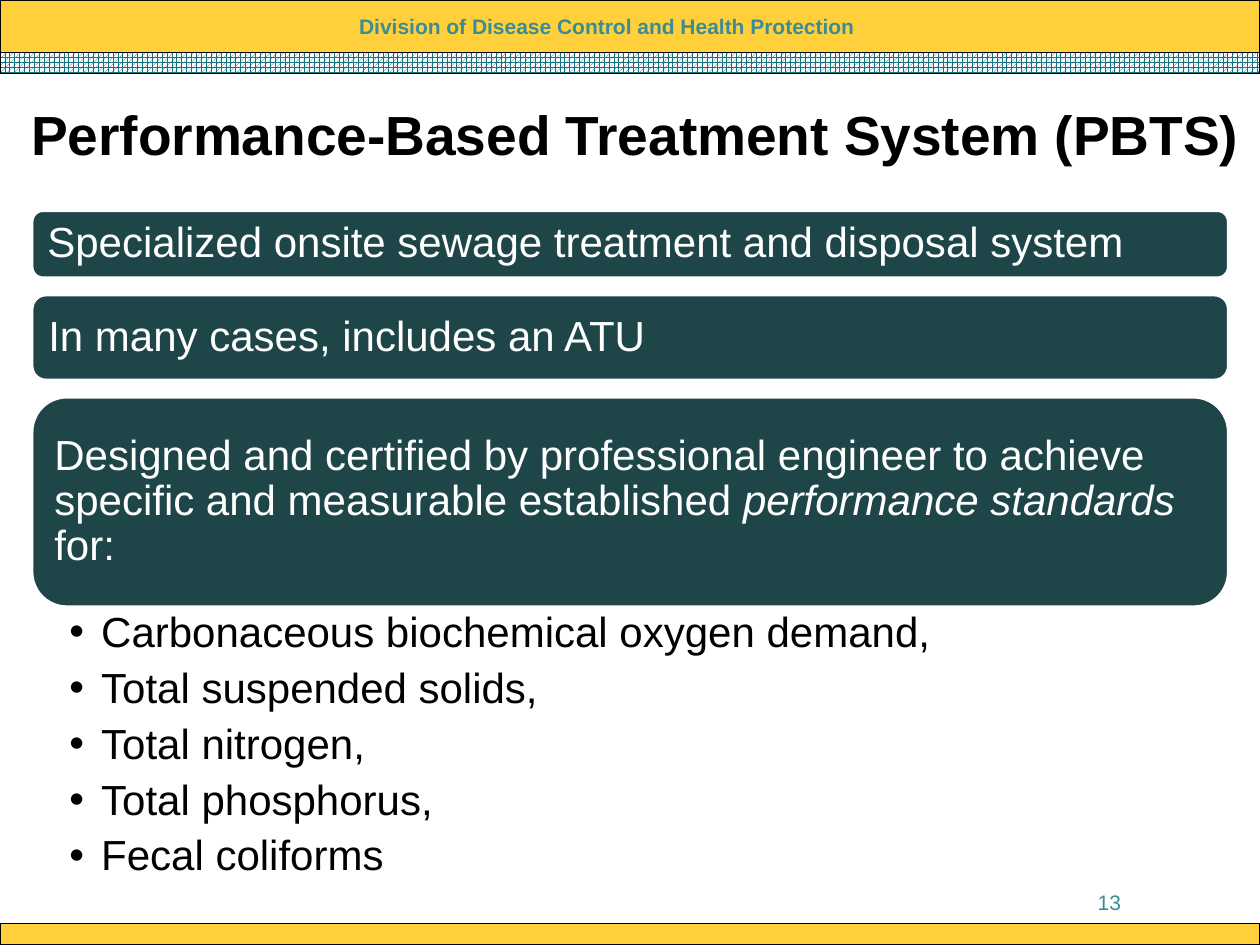
from dataclasses import dataclass

from lxml.etree import SubElement
from pptx import Presentation
from pptx.dml.color import RGBColor
from pptx.enum.dml import MSO_PATTERN
from pptx.enum.shapes import MSO_SHAPE
from pptx.enum.text import MSO_ANCHOR, MSO_AUTO_SIZE, PP_ALIGN
from pptx.oxml.ns import qn
from pptx.util import Cm, Pt


@dataclass(frozen=True)
class Theme:
    font: str = "Arial"
    gold: RGBColor = RGBColor(0xFF, 0xD0, 0x3B)
    weave: RGBColor = RGBColor(0x16, 0x71, 0x80)
    teal: RGBColor = RGBColor(0x3C, 0x8C, 0x93)
    panel: RGBColor = RGBColor(0x1E, 0x46, 0x49)
    black: RGBColor = RGBColor(0, 0, 0)
    white: RGBColor = RGBColor(0xFF, 0xFF, 0xFF)
    title_size: float = 31.5
    body_size: float = 24
    small_size: float = 12


THEME = Theme()
SLIDE_WIDTH, SLIDE_HEIGHT = 25.4, 19.05
MARGIN, CONTENT_WIDTH = 0.64, 24.13
PANELS_TOP, PANEL_GAP = 4.24, 0.33
TITLE = "Performance-Based Treatment System (PBTS)"
# Each panel: height in cm, then its runs as (text, italic)
PANELS = [
    (1.37, [("Specialized onsite sewage treatment and disposal system", False)]),
    (1.73, [("In many cases, includes an ATU", False)]),
    (4.24, [
        ("Designed and certified by professional engineer to achieve "
         "specific and measurable established ", False),
        ("performance standards", True),
        (" for:", False),
    ]),
]
STANDARDS = [
    "Carbonaceous biochemical oxygen demand,",
    "Total suspended solids,",
    "Total nitrogen,",
    "Total phosphorus,",
    "Fecal coliforms",
]


def write(paragraph, text, *, size=THEME.body_size, color=THEME.black,
          bold=False, italic=False, align=PP_ALIGN.LEFT, spacing=1.0):
    """Append one formatted run to a paragraph."""
    paragraph.alignment = align
    paragraph.line_spacing = spacing
    paragraph.space_before = Pt(0)
    run = paragraph.add_run()
    run.text = text
    run.font.name = THEME.font
    run.font.size = Pt(size)
    run.font.color.rgb = color
    run.font.bold = bold
    run.font.italic = italic


def place(shape, left, top, width, height):
    shape.left, shape.top = Cm(left), Cm(top)
    shape.width, shape.height = Cm(width), Cm(height)


def set_frame(frame, anchor, left=0.25, top=0.13, right=0.25, bottom=0.13):
    frame.word_wrap = True
    frame.auto_size = MSO_AUTO_SIZE.NONE
    frame.vertical_anchor = anchor
    frame.margin_left, frame.margin_right = Cm(left), Cm(right)
    frame.margin_top, frame.margin_bottom = Cm(top), Cm(bottom)


def add_band(slide, top, height, woven=False):
    """Add a full-width outlined band, gold or patterned."""
    band = slide.shapes.add_shape(MSO_SHAPE.RECTANGLE, 0, Cm(top),
                                  Cm(SLIDE_WIDTH), Cm(height))
    band.shadow.inherit = False
    if woven:
        band.fill.patterned()
        band.fill.pattern = MSO_PATTERN.SPHERE
        band.fill.fore_color.rgb = THEME.weave
        band.fill.back_color.rgb = THEME.white
    else:
        band.fill.solid()
        band.fill.fore_color.rgb = THEME.gold
    band.line.color.rgb = THEME.black
    band.line.width = Pt(0.75)


def add_label(slide, text, left, top, width, height, anchor, **text_format):
    label = slide.shapes.add_textbox(Cm(left), Cm(top), Cm(width), Cm(height))
    set_frame(label.text_frame, anchor)
    write(label.text_frame.paragraphs[0], text, size=THEME.small_size,
          color=THEME.teal, **text_format)


def add_panel(slide, top, height, runs):
    panel = slide.shapes.add_shape(MSO_SHAPE.ROUNDED_RECTANGLE, Cm(MARGIN),
                                   Cm(top), Cm(CONTENT_WIDTH), Cm(height))
    panel.shadow.inherit = False
    panel.fill.solid()
    panel.fill.fore_color.rgb = THEME.panel
    panel.line.color.rgb = THEME.white
    panel.line.width = Pt(2)
    set_frame(panel.text_frame, MSO_ANCHOR.MIDDLE)
    for text, italic in runs:
        write(panel.text_frame.paragraphs[0], text, color=THEME.white,
              italic=italic, spacing=0.9)


def fill_title(title):
    place(title, 0.2, 1.7, 25.2, 1.98)
    set_frame(title.text_frame, MSO_ANCHOR.MIDDLE)
    write(title.text_frame.paragraphs[0], TITLE, size=THEME.title_size,
          bold=True, align=PP_ALIGN.CENTER)


def fill_standards(body, top):
    place(body, MARGIN, top, CONTENT_WIDTH, 5.38)
    frame = body.text_frame
    set_frame(frame, MSO_ANCHOR.TOP, left=0.76, top=0.08, right=0.48, bottom=0.08)
    for index, standard in enumerate(STANDARDS):
        paragraph = frame.add_paragraph() if index else frame.paragraphs[0]
        properties = paragraph._p.get_or_add_pPr()
        properties.set("marL", str(Cm(0.64)))
        properties.set("indent", str(-Cm(0.64)))
        SubElement(properties, qn("a:buFont"), typeface=THEME.font)
        SubElement(properties, qn("a:buChar"), char="•")
        write(paragraph, standard, spacing=0.9)
        paragraph.space_after = Pt(6)


def main():
    presentation = Presentation()
    presentation.slide_width = Cm(SLIDE_WIDTH)
    presentation.slide_height = Cm(SLIDE_HEIGHT)
    slide = presentation.slides.add_slide(presentation.slide_layouts[1])

    add_band(slide, 0, 1.06)
    add_band(slide, 1.06, 0.42, woven=True)
    add_band(slide, SLIDE_HEIGHT - 0.43, 0.43)
    add_label(slide, "Division of Disease Control and Health Protection",
              6.99, 0.15, 10.6, 0.76, MSO_ANCHOR.TOP, bold=True)
    add_label(slide, "13", 18.2, 17.67, 4.65, 1.02, MSO_ANCHOR.MIDDLE,
              align=PP_ALIGN.RIGHT)
    fill_title(slide.shapes.title)

    top = PANELS_TOP
    for height, runs in PANELS:
        add_panel(slide, top, height, runs)
        top += height + PANEL_GAP
    fill_standards(slide.placeholders[1], top - PANEL_GAP)

    presentation.save("out.pptx")


if __name__ == "__main__":
    main()
